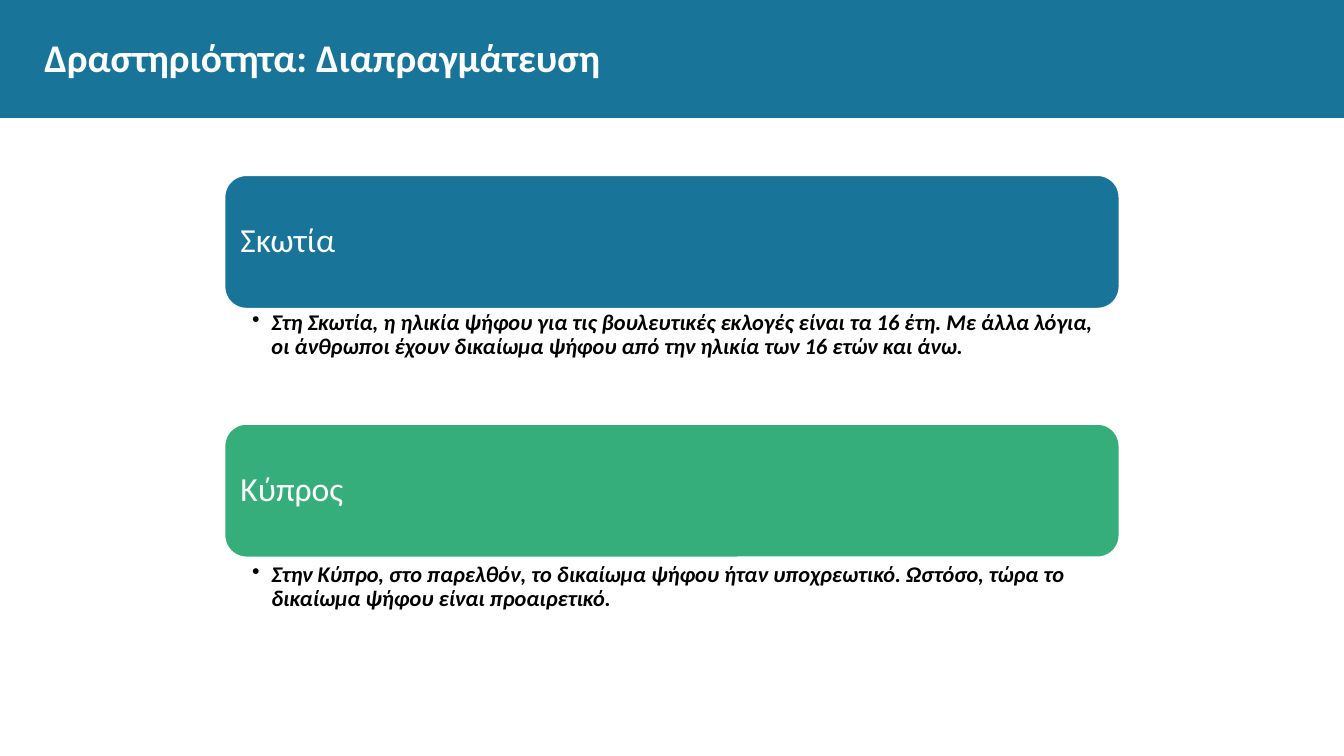
import pptx
import pptx.util
import pptx.dml.color
import pptx.enum.shapes
import pptx.enum.text
import lxml.etree

THEME = {
    "font": "Calibri",
    "blue": "187498",
    "green": "36AE7C",
    "white": "FFFFFF",
    "black": "000000",
    "title_size": 28,
    "country_size": 24,
    "fact_size": 16,
}

COUNTRIES = [
    ("Σκωτία", "blue",
     "Στη Σκωτία, η ηλικία ψήφου για τις βουλευτικές εκλογές είναι τα 16 έτη. "
     "Με άλλα λόγια, οι άνθρωποι έχουν δικαίωμα ψήφου από την ηλικία των 16 ετών και άνω."),
    ("Κύπρος", "green",
     "Στην Κύπρο, στο παρελθόν, το δικαίωμα ψήφου ήταν υποχρεωτικό. "
     "Ωστόσο, τώρα το δικαίωμα ψήφου είναι προαιρετικό."),
]

Inches = pptx.util.Inches
Pt = pptx.util.Pt


def color(name):
    return pptx.dml.color.RGBColor.from_string(THEME[name])


def write(holder, words, role, ink, insets, anchor="MIDDLE", bold=False, italic=False):
    frame = holder.text_frame
    frame.text = words
    frame.word_wrap = True
    frame.vertical_anchor = getattr(pptx.enum.text.MSO_ANCHOR, anchor)
    frame.margin_left, frame.margin_top, frame.margin_right, frame.margin_bottom = map(Inches, insets)
    paragraph = frame.paragraphs[0]
    paragraph.alignment = pptx.enum.text.PP_ALIGN.LEFT
    font = paragraph.runs[0].font
    font.name = THEME["font"]
    font.size = Pt(THEME[role])
    font.color.rgb = color(ink)
    font.bold = bold
    font.italic = italic
    return paragraph


deck = pptx.Presentation()
deck.slide_width = Inches(13.33)
deck.slide_height = Inches(7.5)
width, height = deck.slide_width, deck.slide_height
slide = deck.slides.add_slide(deck.slide_layouts[6])
shapes = slide.shapes
shape_kinds = pptx.enum.shapes.MSO_SHAPE

header = shapes.add_shape(shape_kinds.RECTANGLE, 0, 0, width, int(height * 0.156))
header.shadow.inherit = False
header.fill.solid()
header.fill.fore_color.rgb = color("blue")
header.line.fill.background()

title = shapes.add_textbox(int(width * 0.033), int(height * 0.025), int(width * 0.935), int(height * 0.1))
write(title, "Δραστηριότητα: Διαπραγμάτευση", "title_size", "white", (0, 0, 0, 0), bold=True)

column_left, column_width = width // 6, width * 2 // 3
country_top, country_pitch, country_height = height * 0.231, height * 0.329, height * 0.178
fact_top, fact_pitch, fact_height = height * 0.409, height / 3, height * 0.157

for row, (country, fill, fact) in enumerate(COUNTRIES):
    banner = shapes.add_shape(shape_kinds.ROUNDED_RECTANGLE, column_left,
                              int(country_top + row * country_pitch), column_width, int(country_height))
    banner.shadow.inherit = False
    banner.fill.solid()
    banner.fill.fore_color.rgb = color(fill)
    banner.line.color.rgb = color("white")
    banner.line.width = Pt(2)
    heading = write(banner, country, "country_size", "white", (0.1, 0.1, 0.1, 0.1))
    heading.line_spacing = 0.9

    detail = shapes.add_textbox(column_left, int(fact_top + row * fact_pitch), column_width, int(fact_height))
    bullet = write(detail, fact, "fact_size", "black", (0.28, 0.02, 0.12, 0.02),
                   anchor="TOP", bold=True, italic=True)
    bullet.line_spacing = 0.9
    properties = bullet._p.get_or_add_pPr()
    properties.set("marL", str(Inches(0.19)))
    properties.set("indent", str(-Inches(0.19)))
    namespace = "{" + properties.nsmap["a"] + "}"
    bullet_color = lxml.etree.SubElement(properties, namespace + "buClr")
    lxml.etree.SubElement(bullet_color, namespace + "srgbClr", val=THEME["black"])
    lxml.etree.SubElement(properties, namespace + "buChar", char="•")

deck.save("out.pptx")
